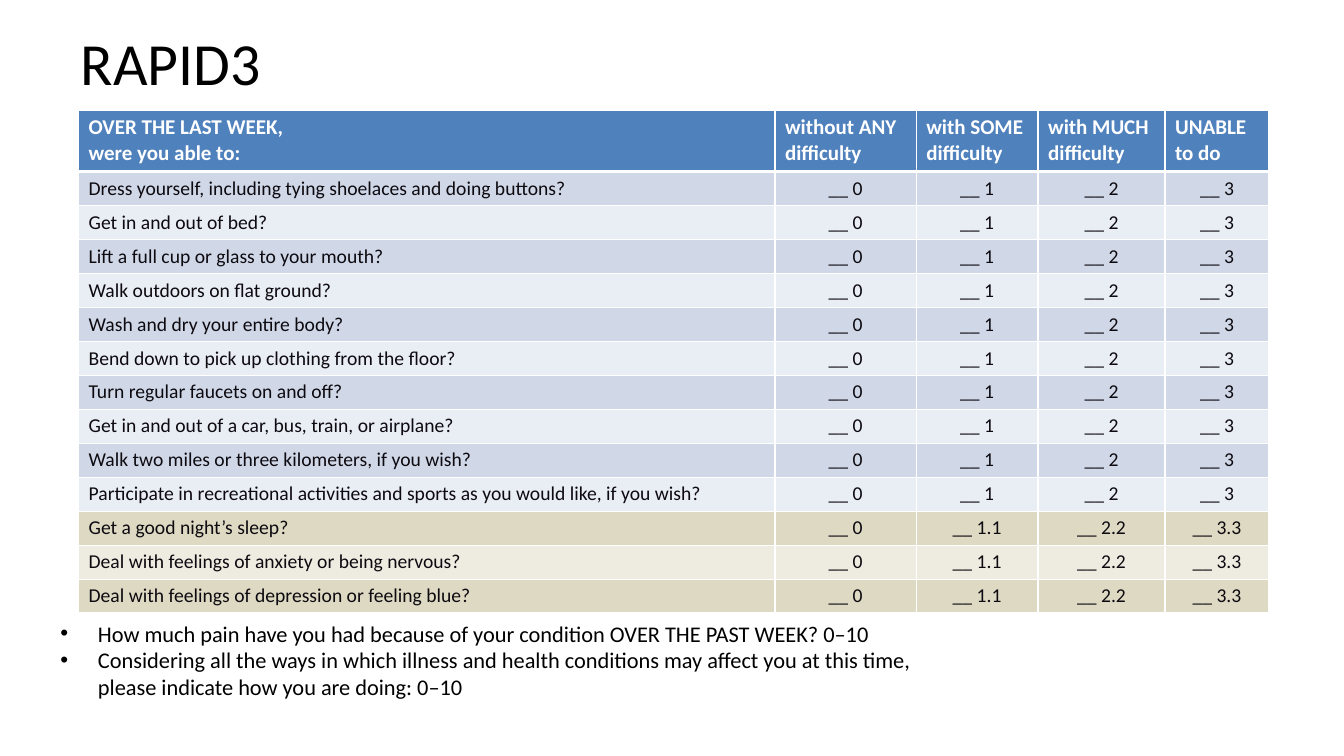
from pptx import Presentation
from pptx.dml.color import RGBColor as RGB
from pptx.enum.text import MSO_ANCHOR as Anchor, MSO_AUTO_SIZE as AutoSize, PP_ALIGN as Align
from pptx.oxml import parse_xml
from pptx.oxml.ns import nsdecls
from pptx.util import Cm, Pt

TITLE = "RAPID3"
HEADERS = [
    "OVER THE LAST WEEK,\vwere you able to:",
    "without ANY difficulty",
    "with SOME difficulty",
    "with MUCH difficulty",
    "UNABLE to do",
]
FUNCTION_QUESTIONS = [
    "Dress yourself, including tying shoelaces and doing buttons?",
    "Get in and out of bed?",
    "Lift a full cup or glass to your mouth?",
    "Walk outdoors on flat ground?",
    "Wash and dry your entire body?",
    "Bend down to pick up clothing from the floor?",
    "Turn regular faucets on and off?",
    "Get in and out of a car, bus, train, or airplane?",
    "Walk two miles or three kilometers, if you wish?",
    "Participate in recreational activities and sports as you would like, if you wish?",
]
WELLBEING_QUESTIONS = [
    "Get a good night’s sleep?",
    "Deal with feelings of anxiety or being nervous?",
    "Deal with feelings of depression or feeling blue?",
]
FUNCTION_SCORES = ["0", "1", "2", "3"]
WELLBEING_SCORES = ["0", "1.1", "2.2", "3.3"]
SCALES = [
    "How much pain have you had because of your condition OVER THE PAST WEEK? 0–10",
    "Considering all the ways in which illness and health conditions may affect you "
    "at this time, please indicate how you are doing: 0–10",
]

THEME = {
    "header_fill": "4F81BD",
    "function_bands": ("D0D8E8", "E9EDF4"),
    "wellbeing_bands": ("DDD9C3", "EEECE1"),
    "border": "FFFFFF",
    "title": {"name": "Calibri", "size": Pt(42.7), "color": "000000"},
    "header": {"name": "Calibri", "size": Pt(15), "bold": True, "color": "FFFFFF"},
    "answer": {"name": "Calibri", "size": Pt(14), "bold": False, "color": "0D0A10"},
    "scale": {"name": "Calibri", "size": Pt(16), "color": "000000"},
}

COLUMN_WIDTHS = [17.55, 3.56, 3.07, 3.2, 2.62]
HEADER_HEIGHT, ROW_HEIGHT = 1.51, 0.85
TABLE_LEFT, TABLE_TOP = 1.98, 2.77
BULLET_INDENT = Cm(0.95)


def format_font(font, style):
    for name, value in style.items():
        if name == "color":
            font.color.rgb = RGB.from_string(value)
        else:
            setattr(font, name, value)


def set_borders(cell, bottom):
    """Draw 1 pt borders, with the bottom one as wide as given in points."""
    properties = cell._tc.get_or_add_tcPr()
    for side, width in {"L": 1, "R": 1, "T": 1, "B": bottom}.items():
        properties.append(parse_xml(
            f'<a:ln{side} {nsdecls("a")} w="{Pt(width)}"><a:solidFill>'
            f'<a:srgbClr val="{THEME["border"]}"/></a:solidFill></a:ln{side}>'))


def fill_row(row, texts, fill, style, score_align, bottom=1):
    for index, (cell, text) in enumerate(zip(row.cells, texts)):
        set_borders(cell, bottom)
        cell.fill.solid()
        cell.fill.fore_color.rgb = RGB.from_string(fill)
        cell.text = text
        paragraph = cell.text_frame.paragraphs[0]
        paragraph.alignment = score_align if index else Align.LEFT
        for run in paragraph.runs:
            format_font(run.font, style)


def add_questionnaire(slide):
    groups = [
        (FUNCTION_QUESTIONS, FUNCTION_SCORES, THEME["function_bands"]),
        (WELLBEING_QUESTIONS, WELLBEING_SCORES, THEME["wellbeing_bands"]),
    ]
    answers = [
        ([question] + [f"__ {score}" for score in scores], bands[index % 2])
        for questions, scores, bands in groups
        for index, question in enumerate(questions)
    ]
    table = slide.shapes.add_table(
        len(answers) + 1, len(HEADERS), Cm(TABLE_LEFT), Cm(TABLE_TOP),
        Cm(sum(COLUMN_WIDTHS)), Cm(HEADER_HEIGHT + ROW_HEIGHT * len(answers))).table
    table.horz_banding = False
    for column, width in zip(table.columns, COLUMN_WIDTHS):
        column.width = Cm(width)

    header, *rows = table.rows
    header.height = Cm(HEADER_HEIGHT)
    fill_row(header, HEADERS, THEME["header_fill"], THEME["header"], Align.LEFT, bottom=3)
    for row, (texts, fill) in zip(rows, answers):
        row.height = Cm(ROW_HEIGHT)
        fill_row(row, texts, fill, THEME["answer"], Align.CENTER)


def add_scales(slide):
    frame = slide.shapes.add_textbox(Cm(1.27), Cm(15.49), Cm(23.34), Cm(2.31)).text_frame
    frame.word_wrap = True
    frame.auto_size = AutoSize.SHAPE_TO_FIT_TEXT
    frame.text = "\n".join(SCALES)
    for paragraph in frame.paragraphs:
        properties = paragraph._p.get_or_add_pPr()
        properties.set("marL", str(BULLET_INDENT))
        properties.set("indent", str(-BULLET_INDENT))
        properties.append(parse_xml(f'<a:buFont {nsdecls("a")} typeface="Arial"/>'))
        properties.append(parse_xml(f'<a:buChar {nsdecls("a")} char="•"/>'))
        format_font(paragraph.runs[0].font, THEME["scale"])


def add_title(slide):
    frame = slide.shapes.add_textbox(Cm(1.7), Cm(0.15), Cm(30.48), Cm(2.79)).text_frame
    frame.word_wrap = True
    frame.vertical_anchor = Anchor.MIDDLE
    frame.margin_left = frame.margin_right = Cm(0.34)
    frame.margin_top = frame.margin_bottom = Cm(0.17)
    frame.text = TITLE
    format_font(frame.paragraphs[0].runs[0].font, THEME["title"])


def main():
    presentation = Presentation()
    presentation.slide_width, presentation.slide_height = Cm(33.87), Cm(19.05)
    slide = presentation.slides.add_slide(presentation.slide_layouts[6])
    add_questionnaire(slide)
    add_scales(slide)
    add_title(slide)
    presentation.save("out.pptx")


if __name__ == "__main__":
    main()
